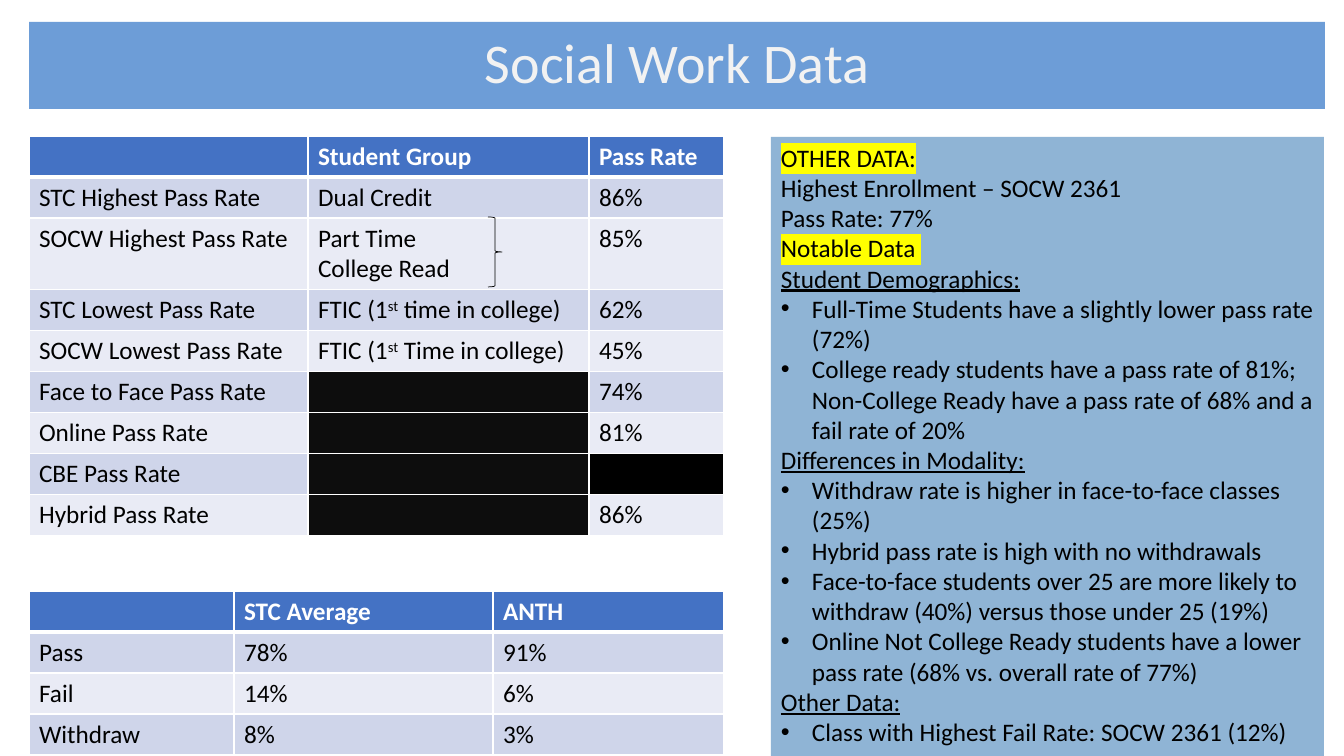
"""Build the Social Work Data slide with two tables and a notes panel."""
from dataclasses import dataclass
from typing import Optional

from lxml.etree import SubElement
from pptx import Presentation
from pptx.dml.color import RGBColor
from pptx.enum.shapes import MSO_SHAPE
from pptx.enum.text import MSO_ANCHOR, PP_ALIGN
from pptx.oxml.ns import qn
from pptx.slide import Slide
from pptx.table import _Cell as Cell
from pptx.text.text import _Paragraph as Para
from pptx.util import Emu, Pt

SCALE = 12192000 / 1344


@dataclass(frozen=True)
class Theme:
    font: str = "Calibri"
    title: int = 40
    body: int = 18
    banner: str = "6D9DD7"
    pale: str = "F2F2F2"
    white: str = "FFFFFF"
    ink: str = "000000"
    head: str = "4472C4"
    bands: tuple[str, str] = ("E9EBF5", "CFD5EA")
    blanks: tuple[str, ...] = ("000000", "0D0D0D", "000000")
    panel: str = "8FB4D5"
    mark: str = "FFFF00"


@dataclass(frozen=True)
class Grid:
    left: int
    top: int
    cols: tuple[int, ...]
    rows: tuple[tuple[Optional[str], ...], ...]


@dataclass(frozen=True)
class Note:
    text: str
    mark: bool = False
    under: bool = False
    bullet: bool = False


THEME = Theme()
ROW = 41
LINE = 30

GROUPS = Grid(29, 136, (279, 281, 135), (
    ("", "Student Group", "Pass Rate"),
    ("STC Highest Pass Rate", "Dual Credit", "86%"),
    ("SOCW Highest Pass Rate", "Part Time\nCollege Read", "85%"),
    ("STC Lowest Pass Rate", "FTIC (1^st^ time in college)", "62%"),
    ("SOCW Lowest Pass Rate", "FTIC (1^st^ Time in college)", "45%"),
    ("Face to Face Pass Rate", None, "74%"),
    ("Online Pass Rate", None, "81%"),
    ("CBE Pass Rate", None, None),
    ("Hybrid Pass Rate", None, "86%"),
))
RATES = Grid(29, 591, (205, 259, 231), (
    ("", "STC Average", "ANTH"),
    ("Pass", "78%", "91%"),
    ("Fail", "14%", "6%"),
    ("Withdraw", "8%", "3%"),
))
NOTES = (
    Note("OTHER DATA:", mark=True),
    Note("Highest Enrollment – SOCW 2361"),
    Note("Pass Rate: 77%"),
    Note("Notable Data ", mark=True),
    Note("Student Demographics:", under=True),
    Note("Full-Time Students have a slightly lower pass rate (72%)", bullet=True),
    Note("College ready students have a pass rate of 81%; Non-College Ready "
         "have a pass rate of 68% and a fail rate of 20%", bullet=True),
    Note("Differences in Modality:", under=True),
    Note("Withdraw rate is higher in face-to-face classes (25%)", bullet=True),
    Note("Hybrid pass rate is high with no withdrawals", bullet=True),
    Note("Face-to-face students over 25 are more likely to withdraw (40%) "
         "versus those under 25 (19%)", bullet=True),
    Note("Online Not College Ready students have a lower pass rate "
         "(68% vs. overall rate of 77%)", bullet=True),
    Note("Other Data:", under=True),
    Note("Class with Highest Fail Rate: SOCW 2361 (12%)", bullet=True),
)


def px(size: int) -> Emu:
    return Emu(round(size * SCALE))


def rgb(code: str) -> RGBColor:
    return RGBColor.from_string(code)


def add_run(para: Para, text: str, size: int, tint: str, bold: bool = False,
            under: bool = False, mark: bool = False, raised: bool = False) -> None:
    run = para.add_run()
    run.text = text
    font = run.font
    font.name, font.size, font.bold, font.underline = THEME.font, Pt(size), bold, under
    font.color.rgb = rgb(tint)
    props = run._r.get_or_add_rPr()
    if raised:
        props.set("baseline", "30000")
    if mark:
        glow = SubElement(props, qn("a:highlight"))
        SubElement(glow, qn("a:srgbClr"), val=THEME.mark)
        props.find(qn("a:solidFill")).addnext(glow)


def add_edges(cell: Cell, row: int) -> None:
    props = cell._tc.get_or_add_tcPr()
    thick = {"T": row == 1, "B": row == 0}
    for side in "LRTB":
        width = Pt(3 if thick.get(side) else 1)
        edge = SubElement(props, qn(f"a:ln{side}"), w=str(width))
        fill = SubElement(edge, qn("a:solidFill"))
        SubElement(fill, qn("a:srgbClr"), val=THEME.white)


def fill_cell(cell: Cell, text: Optional[str], row: int, col: int) -> None:
    add_edges(cell, row)
    shade = THEME.head if row == 0 else THEME.bands[row % 2]
    cell.fill.solid()
    cell.fill.fore_color.rgb = rgb(THEME.blanks[col] if text is None else shade)
    if not text:
        return
    for num, line in enumerate(text.split("\n")):
        para = cell.text_frame.add_paragraph() if num else cell.text_frame.paragraphs[0]
        for part, words in enumerate(line.split("^")):
            add_run(para, words, THEME.body, THEME.ink if row else THEME.white,
                    bold=row == 0, raised=part % 2 == 1)


def add_grid(slide: Slide, grid: Grid) -> None:
    highs = [ROW + LINE * max((text or "").count("\n") for text in row)
             for row in grid.rows]
    table = slide.shapes.add_table(
        len(grid.rows), len(grid.cols), px(grid.left), px(grid.top),
        px(sum(grid.cols)), px(sum(highs))).table
    for col, width in enumerate(grid.cols):
        table.columns[col].width = px(width)
    for row, texts in enumerate(grid.rows):
        table.rows[row].height = px(highs[row])
        for col, text in enumerate(texts):
            fill_cell(table.cell(row, col), text, row, col)


def add_title(slide: Slide) -> None:
    title = slide.shapes.title
    title.left, title.top, title.width, title.height = px(29), px(22), px(1296), px(87)
    title.fill.solid()
    title.fill.fore_color.rgb = rgb(THEME.banner)
    title.text_frame.vertical_anchor = MSO_ANCHOR.MIDDLE
    para = title.text_frame.paragraphs[0]
    para.alignment = PP_ALIGN.CENTER
    para.line_spacing = 0.9
    add_run(para, "Social Work Data", THEME.title, THEME.pale)


def add_brace(slide: Slide) -> None:
    brace = slide.shapes.add_shape(
        MSO_SHAPE.RIGHT_BRACE, px(488), px(217), px(14), px(70))
    brace.shadow.inherit = False
    brace.fill.background()
    brace.line.color.rgb = rgb(THEME.ink)
    brace.line.width = Pt(0.5)


def add_panel(slide: Slide) -> None:
    panel = slide.shapes.add_textbox(px(771), px(137), px(553), px(621))
    panel.fill.solid()
    panel.fill.fore_color.rgb = rgb(THEME.panel)
    frame = panel.text_frame
    frame.word_wrap = True
    for num, note in enumerate(NOTES):
        para = frame.add_paragraph() if num else frame.paragraphs[0]
        if note.bullet:
            props = para._p.get_or_add_pPr()
            props.set("marL", str(px(31)))
            props.set("indent", str(-px(31)))
            SubElement(props, qn("a:buFont"), typeface="Arial")
            SubElement(props, qn("a:buChar"), char="•")
        add_run(para, note.text, THEME.body, THEME.ink,
                under=note.under, mark=note.mark)


def main() -> None:
    deck = Presentation()
    deck.slide_width, deck.slide_height = px(1344), px(756)
    slide = deck.slides.add_slide(deck.slide_layouts[5])
    add_title(slide)
    add_grid(slide, GROUPS)
    add_brace(slide)
    add_grid(slide, RATES)
    add_panel(slide)
    deck.save("out.pptx")


if __name__ == "__main__":
    main()
